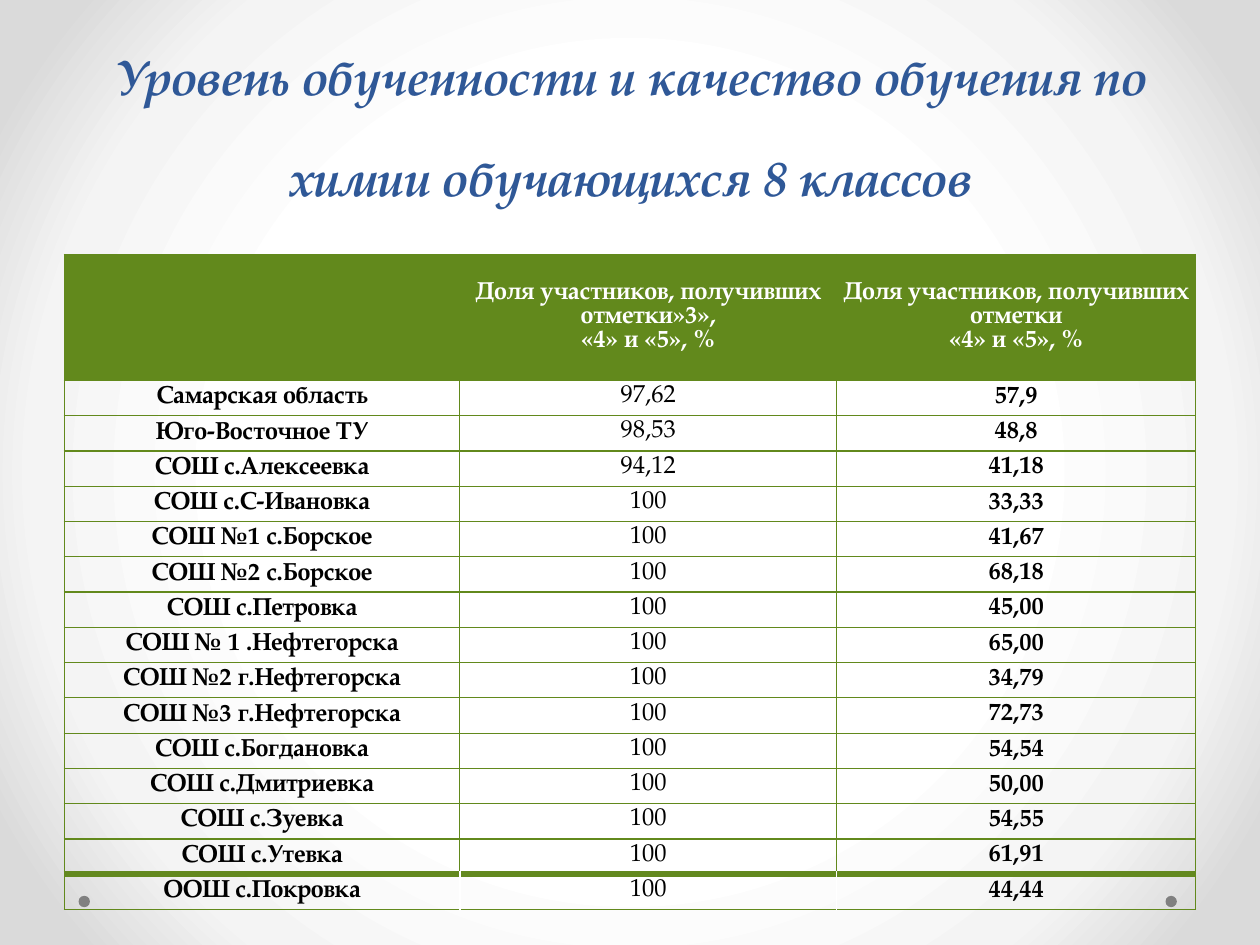
"""Build a slide with a table of chemistry results for grade 8 students."""
from lxml import etree
from pptx import Presentation
from pptx.dml.color import RGBColor
from pptx.enum import shapes, text
from pptx.oxml import ns, parse_xml
from pptx.util import Pt

FONT = "TeX Gyre Pagella"
BLUE = RGBColor(0x2F, 0x58, 0x97)
GREEN = RGBColor(0x62, 0x89, 0x1C)
RULE_GREEN = RGBColor(0x63, 0x89, 0x1F)
GRAY = RGBColor(0x80, 0x80, 0x80)
WHITE = RGBColor(0xFF, 0xFF, 0xFF)
BLACK = RGBColor(0x00, 0x00, 0x00)
PALE_GRAY = RGBColor(0xF4, 0xF4, 0xF4)
EDGE_GRAY = RGBColor(0xDA, 0xDA, 0xDA)

HEADERS = [
    "",
    "Доля участников, получивших отметки»3»,\n«4» и «5», %",
    "Доля участников, получивших отметки\n«4» и «5», %",
]
RESULTS = [
    ("Самарская область", "97,62", "57,9"),
    ("Юго-Восточное ТУ", "98,53", "48,8"),
    ("СОШ с.Алексеевка", "94,12", "41,18"),
    ("СОШ с.С-Ивановка", "100", "33,33"),
    ("СОШ №1 с.Борское", "100", "41,67"),
    ("СОШ №2 с.Борское", "100", "68,18"),
    ("СОШ с.Петровка", "100", "45,00"),
    ("СОШ № 1 .Нефтегорска", "100", "65,00"),
    ("СОШ №2 г.Нефтегорска", "100", "34,79"),
    ("СОШ №3 г.Нефтегорска", "100", "72,73"),
    ("СОШ с.Богдановка", "100", "54,54"),
    ("СОШ с.Дмитриевка", "100", "50,00"),
    ("СОШ с.Зуевка", "100", "54,55"),
    ("СОШ с.Утевка", "100", "61,91"),
    ("ООШ с.Покровка", "100", "44,44"),
]


def format_paragraph(paragraph, size, color, bold, italic=False):
    paragraph.alignment = text.PP_ALIGN.CENTER
    for run in paragraph.runs:
        run.font.name = FONT
        run.font.size = Pt(size)
        run.font.color.rgb = color
        run.font.bold = bold
        run.font.italic = italic


def add_border(cell, side, color, width):
    properties = cell._tc.get_or_add_tcPr()
    line = etree.SubElement(properties, ns.qn(f"a:{side}"), w=str(Pt(width)))
    fill = etree.SubElement(line, ns.qn("a:solidFill"))
    etree.SubElement(fill, ns.qn("a:srgbClr"), val=str(color))


presentation = Presentation()
presentation.slide_width = Pt(720)
presentation.slide_height = Pt(540)
slide = presentation.slides.add_slide(presentation.slide_layouts[5])

slide.background.fill.solid()
background = slide.element.find(".//" + ns.qn("p:bgPr"))
stops = "".join(
    f'<a:gs pos="{position * 1000}"><a:srgbClr val="{color}"/></a:gs>'
    for position, color in ((50, WHITE), (76, PALE_GRAY), (92, EDGE_GRAY))
)
gradient = parse_xml(
    f'<a:gradFill {ns.nsdecls("a")} rotWithShape="1"><a:gsLst>{stops}</a:gsLst>'
    '<a:path path="circle"><a:fillToRect l="50000" t="50000" r="50000" b="50000"/>'
    "</a:path></a:gradFill>"
)
background.replace(background[0], gradient)

for left in (666, 44.9):
    dot = slide.shapes.add_shape(
        shapes.MSO_SHAPE.OVAL, Pt(left), Pt(511.9), Pt(6.5), Pt(6.5)
    )
    dot.shadow.inherit = False
    dot.fill.solid()
    dot.fill.fore_color.rgb = GRAY
    dot.line.fill.background()

title = slide.shapes.title
title.left, title.top, title.width, title.height = Pt(36.7), Pt(31.7), Pt(648), Pt(90)
title.text_frame.text = (
    "Уровень обученности и качество обучения по химии обучающихся 8 классов"
)
title.text_frame.word_wrap = True
title.text_frame.auto_size = text.MSO_AUTO_SIZE.NONE
title.text_frame.vertical_anchor = text.MSO_ANCHOR.BOTTOM
heading = title.text_frame.paragraphs[0]
heading.line_spacing = Pt(58)
format_paragraph(heading, 28, BLUE, True, True)

rows = [HEADERS, *RESULTS]
table = slide.shapes.add_table(
    len(rows), 3, Pt(36.7), Pt(145.4), Pt(646.6), Pt(374.4)
).table
table.horz_banding = False
for column, width in zip(table.columns, (226.1, 215.3, 205.2)):
    column.width = Pt(width)

for row_index, values in enumerate(rows):
    is_header = row_index == 0
    is_last = row_index == len(RESULTS)
    table.rows[row_index].height = Pt(72 if is_header else 20.16)
    for column_index, value in enumerate(values):
        cell = table.cell(row_index, column_index)
        cell.margin_left = cell.margin_right = cell.margin_top = cell.margin_bottom = 0
        cell.vertical_anchor = text.MSO_ANCHOR.MIDDLE
        cell.text_frame.text = value
        for paragraph in cell.text_frame.paragraphs:
            color = WHITE if is_header else BLACK
            format_paragraph(paragraph, 14, color, is_header or column_index != 1)
            if is_header:
                paragraph.line_spacing = Pt(13.7)
            elif column_index:
                paragraph.line_spacing = Pt(13.2)
        if not is_header:
            paragraph.space_before = Pt(2.4 if column_index else 1)

        if not is_last or column_index == 0:
            add_border(cell, "lnL", GREEN, 0.75)
        if not is_last or column_index == 2:
            add_border(cell, "lnR", GREEN, 0.75)
        add_border(cell, "lnT", RULE_GREEN if is_last else GREEN, 4 if is_last else 0.75)
        if row_index == len(RESULTS) - 1:
            add_border(cell, "lnB", RULE_GREEN, 4)
        else:
            add_border(cell, "lnB", GREEN, 0.75)
        if is_header:
            cell.fill.solid()
            cell.fill.fore_color.rgb = GREEN
        else:
            cell.fill.background()

presentation.save("out.pptx")
